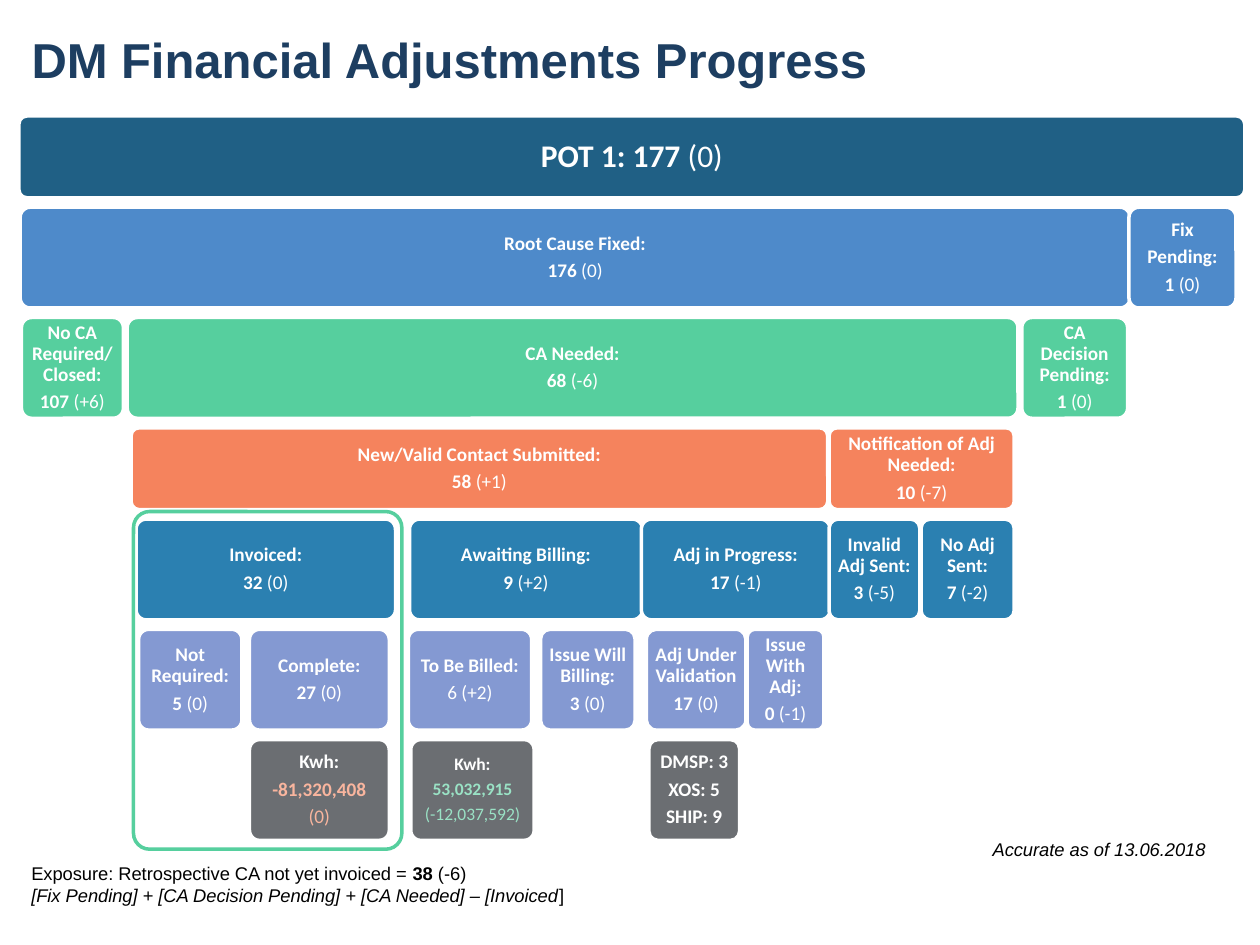
from pptx import Presentation
from pptx import util as u
from pptx.dml import color as c
from pptx.enum import shapes, text

COLORS = {
    "title": "1D3E61", "pot": "206085", "cause": "4E8ACA", "need": "56CF9E",
    "contact": "F5835D", "status": "2B80B1", "detail": "8499D2", "total": "6B6E72",
    "white": "FFFFFF", "black": "000000", "debit": "F9B59E", "credit": "9AE2C5",
}
TOP, GAP = 0.92, 0.075
BOX = {"font": "Calibri", "color": "white", "align": text.PP_ALIGN.CENTER}
NOTE = {"font": "Arial", "size": 10.5, "color": "black"}

# Row: colour, height, boxes. Box: left, width, lines, optional text size.
# Line: bold text, regular text, optional colour.
ROWS = [
    ("pot", 0.65, [(0.15, 9.73, [("POT 1: 177 ", "(0)")], 18)]),
    ("cause", 0.8, [
        (0.16, 8.81, [("Root Cause Fixed:", ""), ("176 ", "(0)")]),
        (8.96, 0.85, [("Fix", ""), ("Pending:", ""), ("1 ", "(0)")])]),
    ("need", 0.8, [
        (0.17, 0.81, [("No CA Required/ Closed:", ""), ("107 ", "(+6)")]),
        (1.01, 7.07, [("CA Needed:", ""), ("68 ", "(-6)")]),
        (8.11, 0.84, [("CA Decision Pending:", ""), ("1 ", "(0)")])]),
    ("contact", 0.65, [
        (1.04, 5.53, [("New/Valid Contact Submitted:", ""), ("58 ", "(+1)")]),
        (6.58, 1.47, [("Notification of Adj Needed:", ""), ("10 ", "(-7)")])]),
    ("status", 0.8, [
        (1.08, 2.06, [("Invoiced:", ""), ("32 ", "(0)")]),
        (3.25, 1.85, [("Awaiting Billing:", ""), ("9 ", "(+2)")]),
        (5.09, 1.5, [("Adj in Progress:", ""), ("17 ", "(-1)")]),
        (6.58, 0.72, [("Invalid Adj Sent:", ""), ("3 ", "(-5)")]),
        (7.31, 0.74, [("No Adj Sent:", ""), ("7 ", "(-2)")])]),
    ("detail", 0.8, [
        (1.1, 0.82, [("Not Required:", ""), ("5 ", "(0)")]),
        (1.98, 1.11, [("Complete:", ""), ("27 ", "(0)")]),
        (3.24, 0.98, [("To Be Billed:", ""), ("", "6 (+2)")]),
        (4.29, 0.75, [("Issue Will Billing:", ""), ("3 ", "(0)")]),
        (5.13, 0.79, [("Adj Under Validation", ""), ("17 ", "(0)")]),
        (5.93, 0.61, [("Issue With Adj:", ""), ("0 ", "(-1)")])]),
    ("total", 0.8, [
        (1.98, 1.11, [("Kwh:", ""), ("-81,320,408", "", "debit"), ("", "(0)", "debit")]),
        (3.26, 0.98, [("Kwh:", ""), ("53,032,915", "", "credit"),
                      ("", "(-12,037,592)", "credit")], 10),
        (5.15, 0.72, [("DMSP: 3", ""), ("XOS: 5", ""), ("SHIP: 9", "")])]),
]


def rgb(name):
    """Return the named colour."""
    return c.RGBColor.from_string(COLORS[name])


def set_attrs(obj, values):
    """Set every attribute in a dict of format values."""
    for name, value in values.items():
        setattr(obj, name, value)


def add_run(p, words, style, **font):
    """Add a formatted run to a paragraph."""
    r = p.add_run()
    r.text = words
    set_attrs(r.font, {"name": style["font"], "size": u.Pt(style["size"]), **font})
    r.font.color.rgb = rgb(style["color"])


def get_paragraph(tf, index):
    """Return the first paragraph or add another one."""
    return tf.add_paragraph() if index else tf.paragraphs[0]


def add_rounded(parent, box, radius, line):
    """Add a rounded rectangle with a two-point outline."""
    sp = parent.shapes.add_shape(
        shapes.MSO_SHAPE.ROUNDED_RECTANGLE, *[u.Inches(v) for v in box])
    sp.adjustments[0] = radius
    sp.shadow.inherit = False
    sp.line.color.rgb = rgb(line)
    sp.line.width = u.Pt(2)
    return sp


def add_box(parent, box, fill, lines, size=11):
    """Add a filled box with bold labels and regular changes."""
    sp = add_rounded(parent, box, 0.1, "white")
    sp.fill.solid()
    sp.fill.fore_color.rgb = rgb(fill)
    tf = sp.text_frame
    inset = u.Pt(size * 0.3)
    set_attrs(tf, {"word_wrap": True, "vertical_anchor": text.MSO_ANCHOR.MIDDLE,
                   "margin_left": inset, "margin_right": inset,
                   "margin_top": inset, "margin_bottom": inset})
    for i, (bold, regular, *color) in enumerate(lines):
        p = get_paragraph(tf, i)
        set_attrs(p, {"alignment": BOX["align"], "line_spacing": 0.9,
                      "space_after": u.Pt(size * 0.35)})
        style = {**BOX, "size": size, "color": color[0] if color else BOX["color"]}
        for words, is_bold in ((bold, True), (regular, False)):
            if words:
                add_run(p, words, style, bold=is_bold)


def add_tree(s):
    """Stack the rows of boxes from the top down."""
    group = s.shapes.add_group_shape()
    top = TOP
    for fill, height, boxes in ROWS:
        for left, width, *content in boxes:
            add_box(group, (left, top, width, height), fill, *content)
        top += height + GAP


def add_note(s, box, lines, align):
    """Add a small note made of lines of runs."""
    tf = s.shapes.add_textbox(*[u.Inches(v) for v in box]).text_frame
    tf.word_wrap = True
    for i, runs in enumerate(lines):
        p = get_paragraph(tf, i)
        p.alignment = align
        for words, font in runs:
            add_run(p, words, NOTE, **font)


def add_title(s, words):
    """Place and format the title."""
    sp = s.shapes.title
    set_attrs(sp, {"left": u.Inches(0.25), "top": u.Inches(-0.06),
                   "width": u.Inches(9.5), "height": u.Inches(1.06)})
    tf = sp.text_frame
    set_attrs(tf, {"margin_left": 0, "margin_right": 0, "margin_top": 0,
                   "margin_bottom": 0, "vertical_anchor": text.MSO_ANCHOR.MIDDLE})
    p = tf.paragraphs[0]
    p.alignment = text.PP_ALIGN.LEFT
    add_run(p, words, {"font": "Arial", "size": 28, "color": "title"}, bold=True)


def main():
    """Build and save the slide."""
    prs = Presentation()
    set_attrs(prs, {"slide_width": u.Inches(10), "slide_height": u.Inches(7.5)})
    s = prs.slides.add_slide(prs.slide_layouts[5])
    add_title(s, "DM Financial Adjustments Progress")
    add_tree(s)
    add_note(s, (0.15, 6.79, 6.57, 0.47), [
        [("Exposure: Retrospective CA not yet invoiced = ", {}),
         ("38 ", {"bold": True}), ("(-6)", {})],
        [("[Fix Pending] + [CA Decision Pending] + [CA Needed] – [Invoiced",
          {"italic": True}), ("]", {})],
    ], text.PP_ALIGN.LEFT)
    add_rounded(s, (1.06, 4.06, 2.13, 2.68), 0.06, "need").fill.background()
    add_note(s, (7.71, 6.6, 2.03, 0.28),
             [[("Accurate as of 13.06.2018", {"italic": True})]],
             text.PP_ALIGN.CENTER)
    prs.save("out.pptx")


if __name__ == "__main__":
    main()
